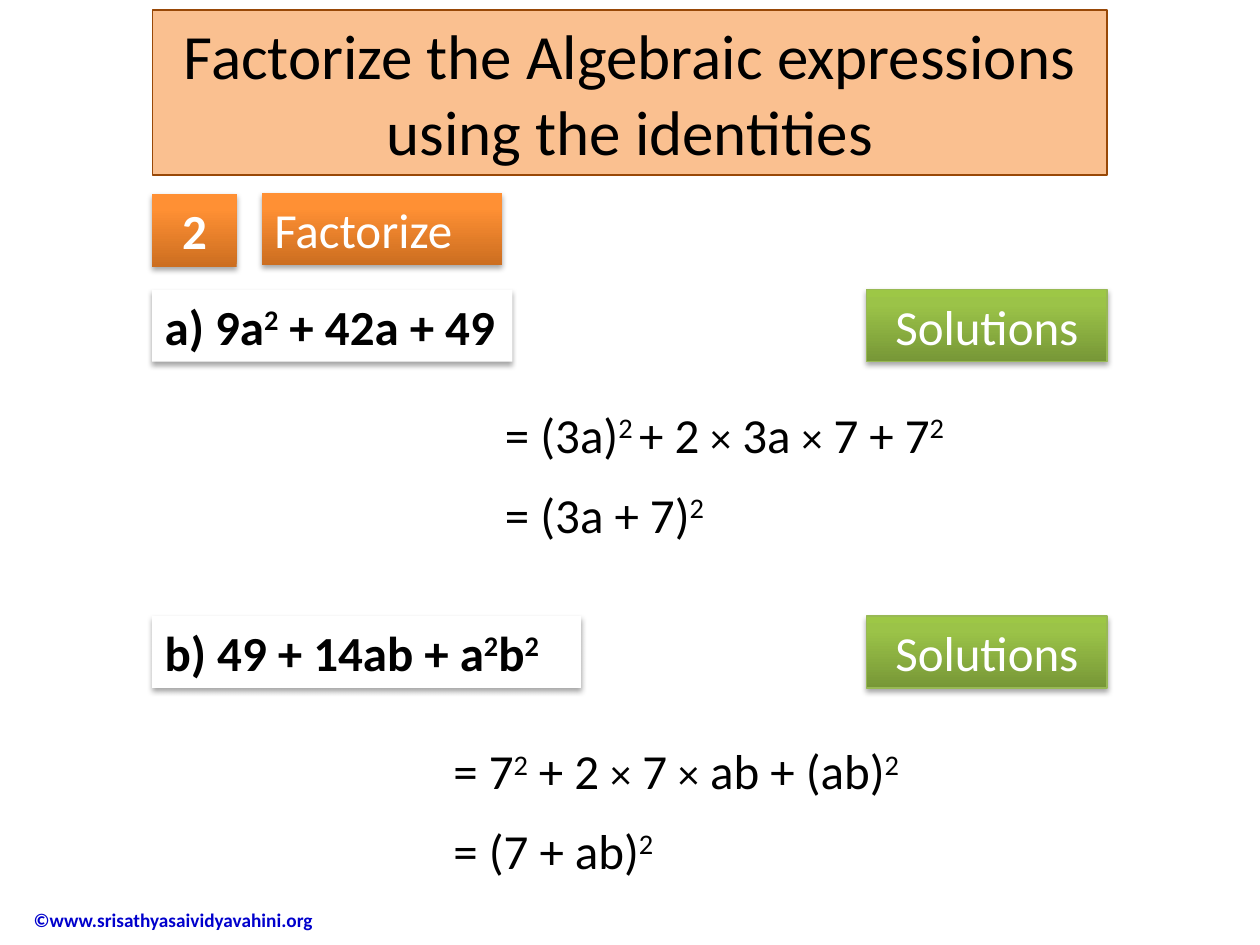
from copy import deepcopy

from lxml import etree
from pptx import Presentation
from pptx import util as u
from pptx.dml.color import RGBColor
from pptx.enum import shapes, text
from pptx.oxml.ns import qn

COLOURS = {
    "black": "000000", "white": "FFFFFF", "link": "0000CC",
    "peach": "FAC090", "brown": "984807", "green_line": "98B955",
}
# Position in the gradient, from bottom to top, and colour
ORANGE = [(0, "CC6E20"), (0.8, "FF9034"), (1, "FF9136")]
GREEN = [(0, "779737"), (0.8, "9BC348"), (1, "9DC746")]
LEFT, RIGHT = 3.07, 22.32
LABEL_WIDTH, LABEL_HEIGHT = 4.85, 1.45


def rgb(name):
    return RGBColor.from_string(COLOURS.get(name, name))


def add_run(para, words, size, colour, bold, raised=False):
    span = para.add_run()
    span.text = words
    span.font.name = "Calibri"
    span.font.size = u.Pt(size)
    span.font.bold = bold
    span.font.color.rgb = rgb(colour)
    if raised:
        span.font._element.set("baseline", "30000")


def write_line(para, line, size=28, colour="black", bold=False):
    """Write one line; ^ switches superscript on and off, × is set smaller."""
    for index, part in enumerate(line.split("^")):
        for place, words in enumerate(part.split("×")):
            if place:
                add_run(para, "×", size - 4, colour, bold)
            if words:
                add_run(para, words, size, colour, bold, raised=index % 2 == 1)


def fill_gradient(shape, stops):
    shape.fill.gradient()
    shape.fill.gradient_angle = 90
    stop_list = shape._element.spPr.find(".//" + qn("a:gsLst"))
    stop_list.append(deepcopy(stop_list[-1]))
    for stop, (position, colour) in zip(shape.fill.gradient_stops, stops):
        stop.position = position
        stop.color.rgb = rgb(colour)


def add_shadow(shape):
    effects = shape._element.spPr.find(qn("a:effectLst"))
    shadow = etree.SubElement(effects, qn("a:outerShdw"), blurRad="40000",
                              dist="23000", dir="5400000", rotWithShape="0")
    colour = etree.SubElement(shadow, qn("a:srgbClr"), val=COLOURS["black"])
    etree.SubElement(colour, qn("a:alpha"), val="35000")


def add_panel(page, area, line, fill, outline=None, shadow=True,
              align=text.PP_ALIGN.CENTER, **style):
    """Add a one-line rectangle; fill is a colour name or gradient stops."""
    box = page.shapes.add_shape(shapes.MSO_SHAPE.RECTANGLE, *map(u.Cm, area))
    box.shadow.inherit = False
    if isinstance(fill, str):
        box.fill.solid()
        box.fill.fore_color.rgb = rgb(fill)
    else:
        fill_gradient(box, fill)
    if outline:
        box.line.color.rgb = rgb(outline)
        box.line.width = u.Pt(0.75)
    else:
        box.line.fill.background()
    if shadow:
        add_shadow(box)
    box.text_frame.word_wrap = True
    para = box.text_frame.paragraphs[0]
    para.alignment = align
    write_line(para, line, **style)


def add_text(page, area, lines, gap=0, **style):
    box = page.shapes.add_textbox(*map(u.Cm, area))
    frame = box.text_frame
    frame.word_wrap = True
    for index, line in enumerate(lines):
        para = frame.add_paragraph() if index else frame.paragraphs[0]
        if index:
            para.space_before = u.Pt(gap)
        write_line(para, line, **style)
    return frame


def add_header(page, left, top, width):
    add_panel(page, (left, top, width, 3.33),
              "Factorize the Algebraic expressions using the identities",
              "peach", "brown", shadow=False, size=36)
    add_panel(page, (left, top + 3.71, 1.7, 1.47), "2", ORANGE,
              colour="white", bold=True)
    add_panel(page, (left + 2.21, top + 3.69, LABEL_WIDTH, LABEL_HEIGHT),
              "Factorize", ORANGE, align=text.PP_ALIGN.LEFT, colour="white")


def add_problem(page, left, top, right, width, question, steps_area, steps):
    """Add a question, its label at the right, and the steps below."""
    add_panel(page, (left, top, width, LABEL_HEIGHT), question, "white",
              align=text.PP_ALIGN.LEFT, bold=True)
    add_panel(page, (right - LABEL_WIDTH, top, LABEL_WIDTH, LABEL_HEIGHT),
              "Solutions", GREEN, "green_line", colour="white")
    across, down, steps_width = steps_area
    add_text(page, (left + across, top + down, steps_width, 3.07), steps, gap=12)


def add_footer(page, left, top):
    frame = add_text(page, (left, top, 6.5, 1.04),
                     ["©www.srisathyasaividyavahini.org"],
                     size=11, colour="link", bold=True)
    frame.vertical_anchor = text.MSO_ANCHOR.MIDDLE


def main():
    deck = Presentation()
    deck.slide_width, deck.slide_height = u.Cm(25.4), u.Cm(19.05)
    page = deck.slides.add_slide(deck.slide_layouts[6])
    add_footer(page, 0.43, 18.03)
    add_header(page, LEFT, 0.2, RIGHT - LEFT)
    add_problem(page, LEFT, 5.84, RIGHT, 7.26, "a) 9a^2^ + 42a + 49",
                (6.86, 2.19, 9.98),
                ["= (3a)^2 ^+ 2 × 3a × 7 + 7^2^", "= (3a + 7)^2^"])
    add_problem(page, LEFT, 12.42, RIGHT, 8.64, "b) 49 + 14ab + a^2^b^2^",
                (5.82, 2.39, 10.08),
                ["= 7^2^ + 2 × 7 × ab + (ab)^2^", "= (7 + ab)^2^"])
    deck.save("out.pptx")


if __name__ == "__main__":
    main()
